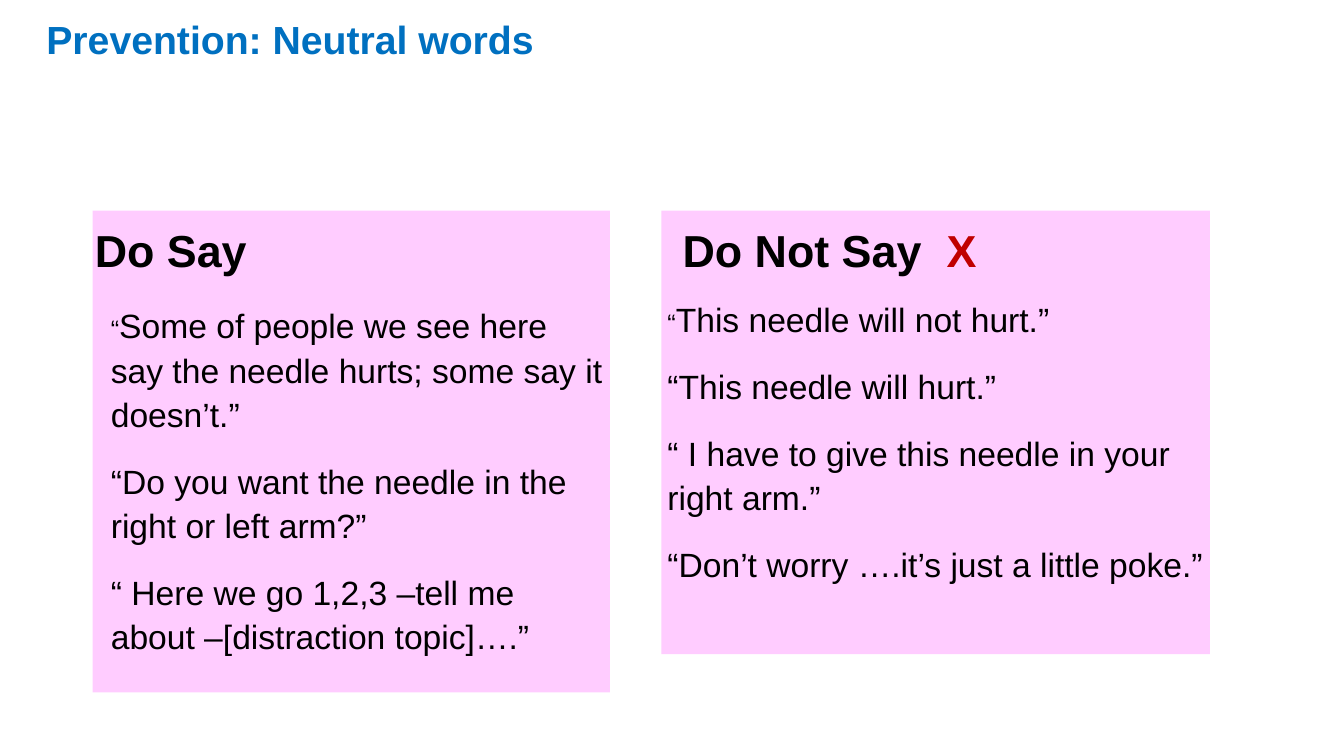
"""Build the slide that contrasts neutral wording with phrases to avoid."""
from lxml.etree import SubElement
from pptx import Presentation
from pptx.dml.color import RGBColor
from pptx.enum.shapes import MSO_SHAPE as Shape
from pptx.enum.text import MSO_ANCHOR as Anchor
from pptx.oxml.ns import qn
from pptx.util import Inches, Pt

BLUE = RGBColor(0x00, 0x70, 0xC0)
BLACK = RGBColor(0x00, 0x00, 0x00)
RED = RGBColor(0xC0, 0x00, 0x00)
PINK = RGBColor(0xFF, 0xCC, 0xFF)


def add_text_box(slide, place, anchor=Anchor.TOP, right_inset=0.02):
    box = slide.shapes.add_textbox(*map(Inches, place))
    frame = box.text_frame
    frame.word_wrap = True
    frame.vertical_anchor = anchor
    frame.margin_left, frame.margin_right = Inches(0.02), Inches(right_inset)
    frame.margin_top = frame.margin_bottom = 0
    return frame


def add_span(para, text, size, color=BLACK, bold=False):
    span = para.add_run()
    span.text = text
    span.font.name = "Arial"
    span.font.size = Pt(size)
    span.font.bold = bold
    span.font.color.rgb = color


deck = Presentation()
deck.slide_width, deck.slide_height = Inches(13.33), Inches(7.5)
page = deck.slides.add_slide(deck.slide_layouts[6])

columns = [
    {
        "panel": (0.92, 2.09, 5.13, 4.78),
        "heading_at": (0.92, 1.84, 5.64, 0.9),
        "heading": [("Do Say", BLACK)],
        "quotes_at": (1.08, 2.99, 4.96, 4.44),
        "quotes": [
            "“Some of people we see here say the needle hurts; some say it doesn’t.”",
            "“Do you want the needle in the right or left arm?”",
            "“ Here we go 1,2,3 –tell me about –[distraction topic]….”",
        ],
    },
    {
        "panel": (6.56, 2.09, 5.44, 4.4),
        "heading_at": (6.75, 1.84, 5.67, 0.9),
        "heading": [("Do Not Say\t", BLACK), ("X", RED)],
        "quotes_at": (6.6, 2.93, 5.67, 4.03),
        "quotes": [
            "“This needle will not hurt.”",
            "“This needle will hurt.”",
            "“ I have to give this needle in your right arm.”",
            "“Don’t worry ….it’s just a little poke.”",
        ],
    },
]

title = add_text_box(page, (0.44, 0.2, 12.63, 1.45), right_inset=0.39).paragraphs[0]
title.line_spacing = 0.9
add_span(title, "Prevention: Neutral words", 28, BLUE, True)

for column in columns:
    panel = page.shapes.add_shape(Shape.RECTANGLE, *map(Inches, column["panel"]))
    panel.shadow.inherit = False
    panel.fill.solid()
    panel.fill.fore_color.rgb = PINK
    panel.line.fill.background()

    heading = add_text_box(page, column["heading_at"], Anchor.BOTTOM).paragraphs[0]
    heading.line_spacing = 1.1
    heading.space_after = Pt(6)
    if len(column["heading"]) > 1:
        tabs = SubElement(heading._p.get_or_add_pPr(), qn("a:tabLst"))
        SubElement(tabs, qn("a:tab"), pos=str(Inches(2.62)), algn="l")
    for text, color in column["heading"]:
        add_span(heading, text, 32, color, True)

    frame = add_text_box(page, column["quotes_at"])
    for index, quote in enumerate(column["quotes"]):
        para = frame.add_paragraph() if index else frame.paragraphs[0]
        para.line_spacing = 1.1
        para.space_after = Pt(6)
        if index:
            para.space_before = Pt(10)
            add_span(para, quote, 24)
        else:
            add_span(para, quote[0], 18)
            add_span(para, quote[1:], 24)

deck.save("out.pptx")
